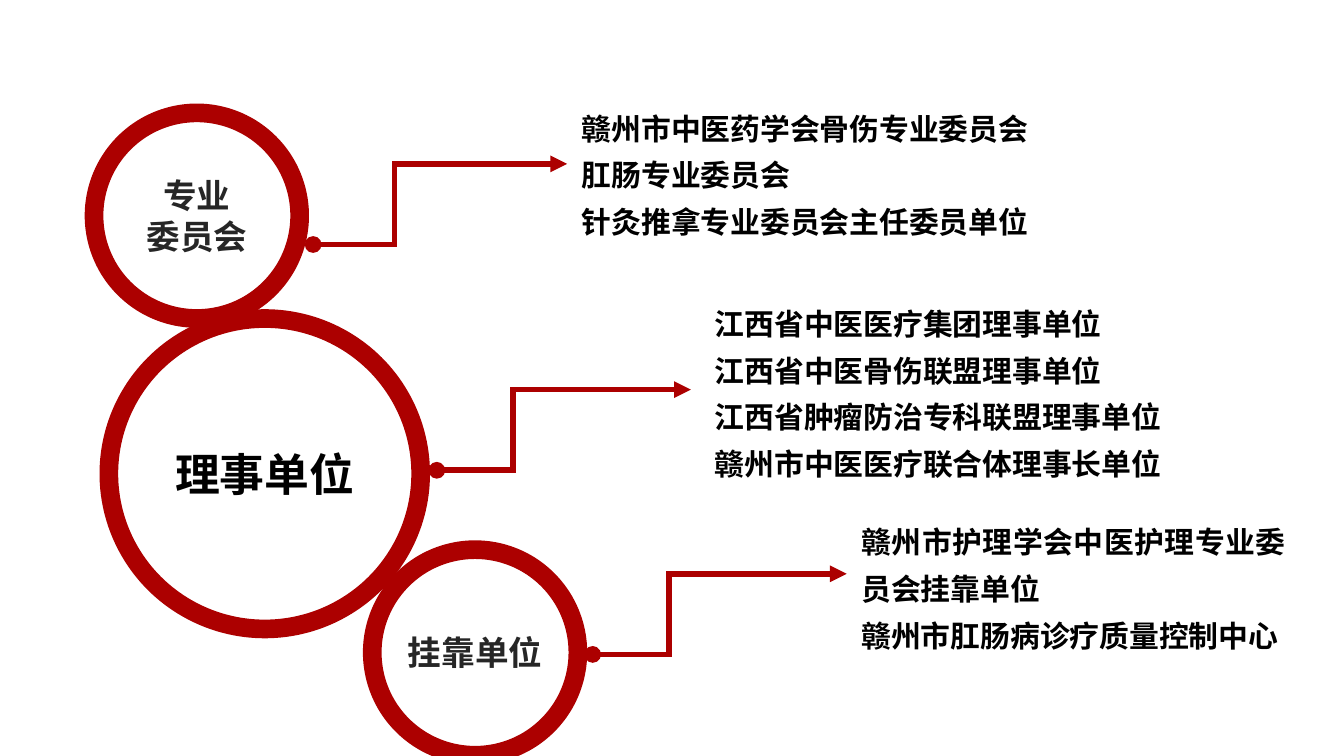
"""Build a slide of three linked circles, each with an arrow to its list of units."""
from dataclasses import dataclass

from lxml import etree
from pptx import Presentation
from pptx.dml.color import RGBColor
from pptx.enum.shapes import MSO_CONNECTOR, MSO_SHAPE
from pptx.enum.text import MSO_ANCHOR, PP_ALIGN
from pptx.oxml.ns import qn
from pptx.util import Inches, Pt

ELBOW = MSO_CONNECTOR.ELBOW
ELLIPSE = MSO_SHAPE.OVAL
MIDDLE = MSO_ANCHOR.MIDDLE
CENTER = PP_ALIGN.CENTER
JUSTIFY = PP_ALIGN.JUSTIFY


@dataclass(frozen=True)
class Theme:
    """Colours, type sizes and line widths of the slide."""
    font: str = "Noto Sans CJK SC"
    red: RGBColor = RGBColor(0xAC, 0x00, 0x00)
    black: RGBColor = RGBColor(0x00, 0x00, 0x00)
    gray: RGBColor = RGBColor(0x26, 0x26, 0x26)
    main_size: Pt = Pt(24)
    side_size: Pt = Pt(18)
    list_size: Pt = Pt(16)
    ring_width: Pt = Pt(10)
    arrow_width: Pt = Pt(3)


THEME = Theme()
ARROW_RUN, ARROW_RISE = 1.89, 0.6

CIRCLES = [
    (0.81, 2.37, 2.32, 2.31, ["理事单位"], THEME.main_size, THEME.black),
    (0.7, 0.84, 1.53, 1.53, ["专业", "委员会"], THEME.side_size, THEME.gray),
    (2.77, 4.09, 1.53, 1.53, ["挂靠单位"], THEME.side_size, THEME.gray),
]
ARROWS = [(2.33, 1.82, 0.32), (3.25, 3.5, 0.3), (4.41, 4.87, 0.3)]
LISTS = [
    (5.21, 2.11, 4.01, 1.56, [
        "江西省中医医疗集团理事单位",
        "江西省中医骨伤联盟理事单位",
        "江西省肿瘤防治专科联盟理事单位",
        "赣州市中医医疗联合体理事长单位",
    ]),
    (4.22, 0.69, 3.75, 1.14, [
        "赣州市中医药学会骨伤专业委员会",
        "肛肠专业委员会",
        "针灸推拿专业委员会主任委员单位",
    ]),
    (6.3, 3.82, 3.38, 1.04, [
        "赣州市护理学会中医护理专业委员会挂靠单位",
        "赣州市肛肠病诊疗质量控制中心",
    ]),
]


def write_lines(frame, lines, size, color, align, spacing, inset_x=0, inset_y=0):
    """Fill a text frame with one bold paragraph per line."""
    frame.word_wrap = True
    frame.vertical_anchor = MIDDLE
    frame.margin_left = frame.margin_right = Inches(inset_x)
    frame.margin_top = frame.margin_bottom = Inches(inset_y)
    for index, line in enumerate(lines):
        para = frame.add_paragraph() if index else frame.paragraphs[0]
        para.text = line
        para.alignment = align
        para.line_spacing = spacing
        para.font.size = size
        para.font.bold = True
        para.font.color.rgb = color
        para.font.name = THEME.font
        defaults = para._p.pPr.find(qn("a:defRPr"))
        etree.SubElement(defaults, qn("a:ea"), typeface=THEME.font)


def add_circle(page, left, top, width, height, lines, size, color):
    """Add a red ring with a centred label."""
    circle = page.shapes.add_shape(
        ELLIPSE, Inches(left), Inches(top), Inches(width), Inches(height))
    circle.shadow.inherit = False
    circle.fill.background()
    circle.line.color.rgb = THEME.red
    circle.line.width = THEME.ring_width
    write_lines(circle.text_frame, lines, size, color, CENTER, 1.0)


def add_arrow(page, left, bottom, bend):
    """Add a stepped arrow that starts with a dot and rises at the bend."""
    arrow = page.shapes.add_connector(
        ELBOW, Inches(left), Inches(bottom),
        Inches(left + ARROW_RUN), Inches(bottom - ARROW_RISE))
    arrow.line.color.rgb = THEME.red
    arrow.line.width = THEME.arrow_width
    properties = arrow._element.spPr
    guides = properties.find(qn("a:prstGeom")).get_or_add_avLst()
    etree.SubElement(
        guides, qn("a:gd"), name="adj1", fmla=f"val {round(bend * 100000)}")
    line = properties.find(qn("a:ln"))
    etree.SubElement(line, qn("a:miter"), lim="800000")
    etree.SubElement(line, qn("a:headEnd"), type="oval")
    etree.SubElement(line, qn("a:tailEnd"), type="triangle")
    etree.SubElement(properties, qn("a:effectLst"))


def add_list(page, left, top, width, height, lines):
    """Add a text box that lists units."""
    box = page.shapes.add_textbox(
        Inches(left), Inches(top), Inches(width), Inches(height))
    write_lines(box.text_frame, lines, THEME.list_size, THEME.black,
                JUSTIFY, 1.3, 0.11, 0.06)


def main():
    """Build and save the deck."""
    deck = Presentation()
    deck.slide_width = Inches(10)
    deck.slide_height = deck.slide_width * 9 // 16
    page = deck.slides.add_slide(deck.slide_layouts[6])
    for circle in CIRCLES:
        add_circle(page, *circle)
    for arrow in ARROWS:
        add_arrow(page, *arrow)
    for units in LISTS:
        add_list(page, *units)
    deck.save("out.pptx")


if __name__ == "__main__":
    main()
